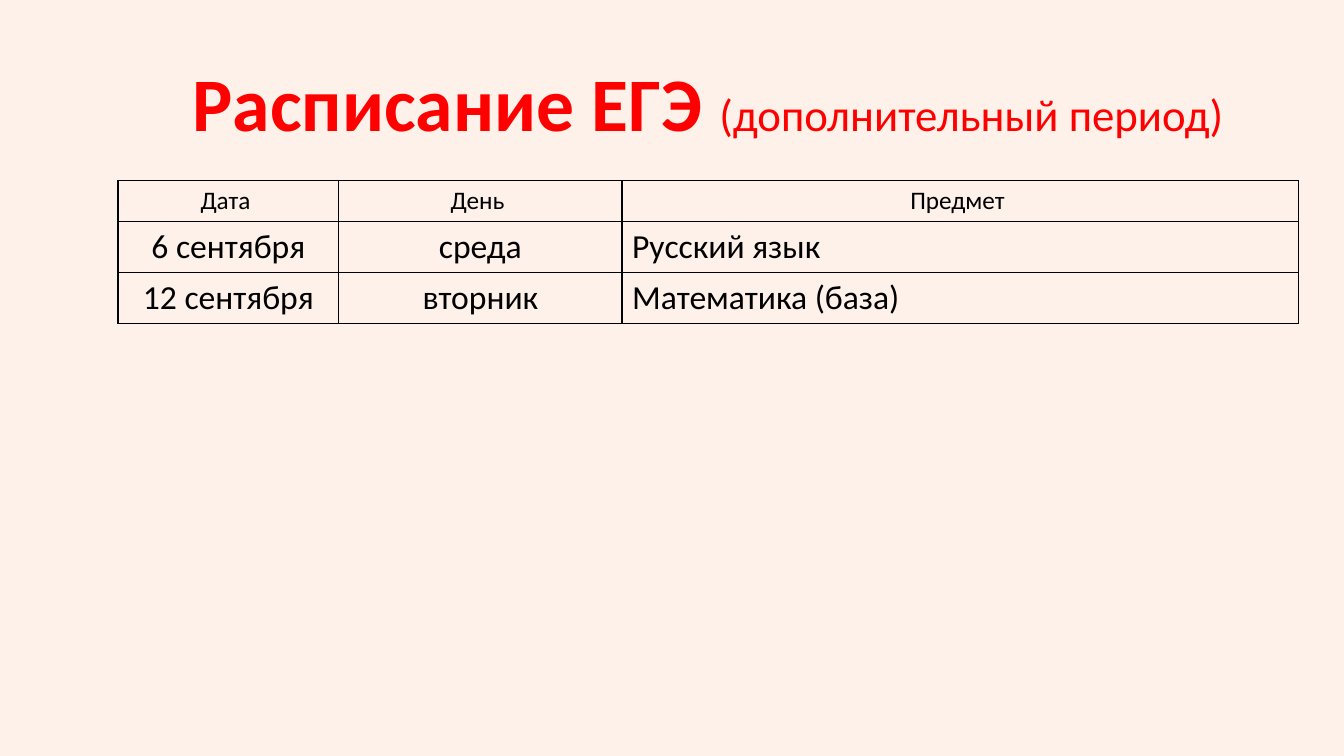
from dataclasses import dataclass

import pptx
import pptx.dml.color
import pptx.enum.text
import pptx.oxml
import pptx.oxml.ns
import pptx.util
from pptx.util import Inches

CENTER = pptx.enum.text.PP_ALIGN.CENTER
LEFT = pptx.enum.text.PP_ALIGN.LEFT
MIDDLE = pptx.enum.text.MSO_ANCHOR.MIDDLE


@dataclass(frozen=True)
class Theme:
    font: str = "Calibri"
    background: str = "FDF1E9"
    title: str = "FF0000"
    ink: str = "000000"
    title_size: int = 54
    subtitle_size: int = 32
    header_size: int = 18
    body_size: int = 24
    border_width: int = 1


def add_text(paragraph, text, *, font, size, color, bold=False):
    run = paragraph.add_run()
    run.text = text
    run.font.name = font
    run.font.size = pptx.util.Pt(size)
    run.font.bold = bold
    run.font.color.rgb = pptx.dml.color.RGBColor.from_string(color)


class SlideBuilder:
    def __init__(self, slide, theme):
        self.slide = slide
        self.theme = theme

    def background(self):
        fill = self.slide.background.fill
        fill.solid()
        fill.fore_color.rgb = pptx.dml.color.RGBColor.from_string(self.theme.background)

    def title(self, main, detail, left, top, width, height):
        theme = self.theme
        shape = self.slide.shapes.title
        shape.left, shape.top = Inches(left), Inches(top)
        shape.width, shape.height = Inches(width), Inches(height)
        frame = shape.text_frame
        frame.word_wrap = True
        frame.vertical_anchor = MIDDLE
        paragraph = frame.paragraphs[0]
        paragraph.alignment = CENTER
        paragraph.line_spacing = 0.9
        add_text(paragraph, main, font=theme.font, size=theme.title_size,
                 color=theme.title, bold=True)
        add_text(paragraph, detail, font=theme.font, size=theme.subtitle_size,
                 color=theme.title)

    def table(self, rows, left, top, column_widths, row_heights):
        shape = self.slide.shapes.add_table(
            len(rows), len(column_widths), Inches(left), Inches(top),
            Inches(sum(column_widths)), Inches(sum(row_heights)))
        table = shape.table
        table.first_row = table.horz_banding = False
        for column, width in zip(table.columns, column_widths):
            column.width = Inches(width)
        for row, height in zip(table.rows, row_heights):
            row.height = Inches(height)
        for row_index, texts in enumerate(rows):
            for column_index, text in enumerate(texts):
                is_header = row_index == 0
                is_subject = column_index == len(texts) - 1
                self.cell(table.cell(row_index, column_index), text,
                          self.theme.header_size if is_header else self.theme.body_size,
                          LEFT if is_subject and not is_header else CENTER)

    def cell(self, cell, text, size, alignment):
        cell.fill.background()
        self.borders(cell)
        paragraph = cell.text_frame.paragraphs[0]
        paragraph.alignment = alignment
        add_text(paragraph, text, font=self.theme.font, size=size, color=self.theme.ink)

    def borders(self, cell):
        properties = cell._tc.get_or_add_tcPr()
        width = pptx.util.Pt(self.theme.border_width)
        # Border lines must come before the cell fill
        for index, side in enumerate(("lnL", "lnR", "lnT", "lnB")):
            properties.insert(index, pptx.oxml.parse_xml(
                f'<a:{side} {pptx.oxml.ns.nsdecls("a")} w="{width}"><a:solidFill>'
                f'<a:srgbClr val="{self.theme.ink}"/></a:solidFill></a:{side}>'))


def main():
    presentation = pptx.Presentation()
    presentation.slide_width = Inches(13.33)
    presentation.slide_height = Inches(7.5)
    slide = presentation.slides.add_slide(presentation.slide_layouts.get_by_name("Title Only"))
    builder = SlideBuilder(slide, Theme())

    # Background and title
    builder.background()
    builder.title("Расписание ЕГЭ ", "(дополнительный период)", 0.92, 0.34, 12.21, 1.45)

    # Exam timetable
    builder.table(
        [
            ("Дата ", "День ", "Предмет "),
            ("6 сентября", "среда", "Русский язык"),
            ("12 сентября", "вторник", "Математика (база)"),
        ],
        1.17, 1.79, column_widths=(2.19, 2.81, 6.71), row_heights=(0.4, 0.5, 0.5))

    presentation.save("out.pptx")


if __name__ == "__main__":
    main()
